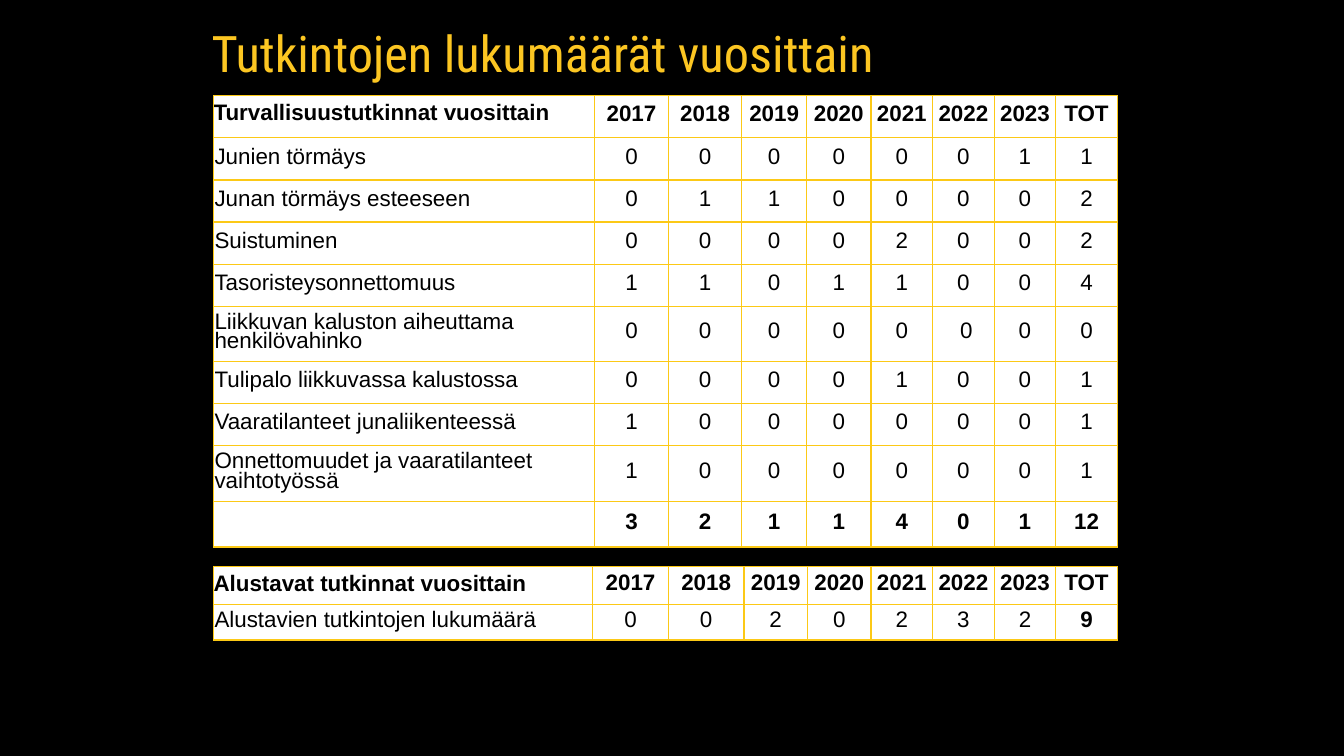
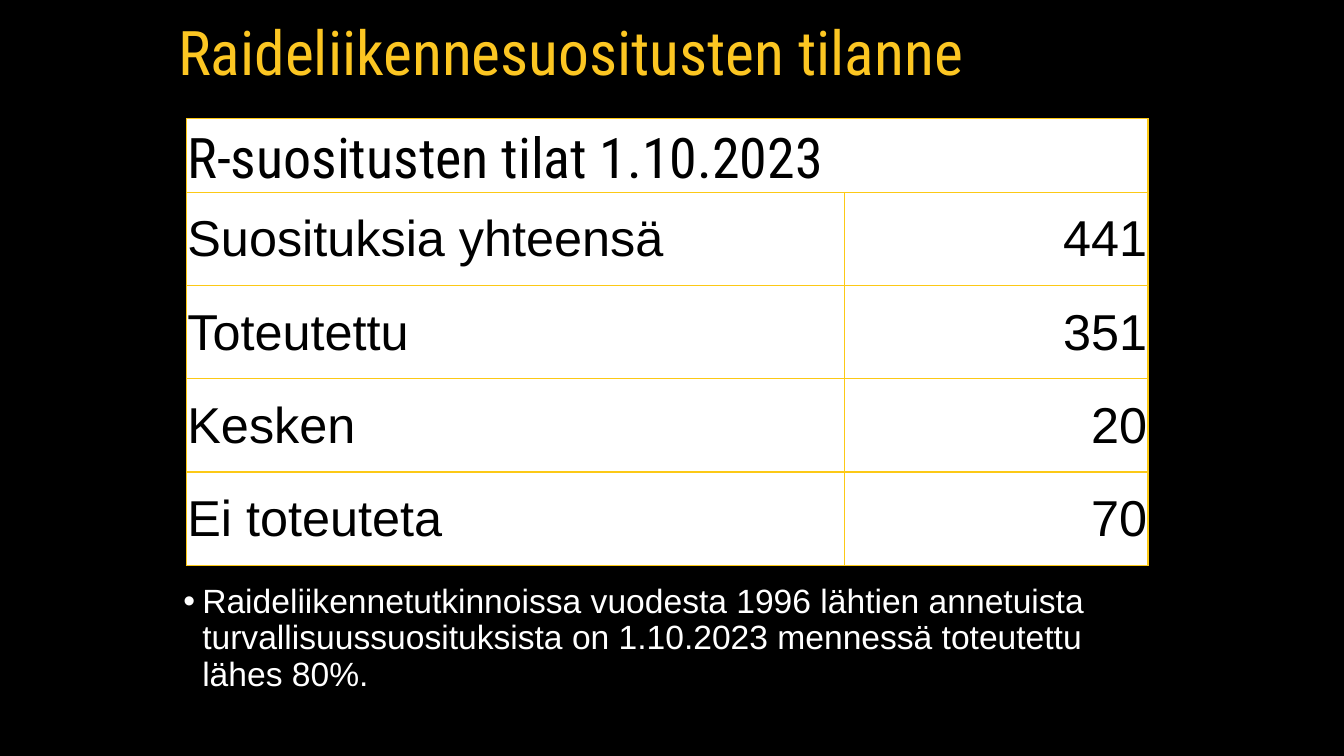
from lxml import etree
from pptx import Presentation
from pptx.dml.color import RGBColor
from pptx.enum import text
from pptx.oxml import ns
from pptx.util import Pt

COLORS = {"background": "000000", "title": "FCC622", "border": "FCC916",
          "cell": "FFFFFF", "ink": "000000", "body": "FFFFFF"}
HEADING_FONT = "Roboto Condensed"
BODY_FONT = "Arial"
ALIGN = text.PP_ALIGN
ANCHOR = text.MSO_ANCHOR

YEARS = ["2017", "2018", "2019", "2020", "2021", "2022", "2023", "TOT"]
INVESTIGATIONS = [
    ["Turvallisuustutkinnat vuosittain", *YEARS],
    ["Junien törmäys", *"00000011"],
    ["Junan törmäys esteeseen", *"01100002"],
    ["Suistuminen", *"00002002"],
    ["Tasoristeysonnettomuus", *"11011004"],
    ["Liikkuvan kaluston aiheuttama henkilövahinko",
     "0", "0", "0", "0", "0", " 0", "0", "0"],
    ["Tulipalo liikkuvassa kalustossa", *"00001001"],
    ["Vaaratilanteet junaliikenteessä", *"10000001"],
    ["Onnettomuudet ja vaaratilanteet vaihtotyössä", *"10000001"],
    ["", "3", "2", "1", "1", "4", "0", "1", "12"],
]
PRELIMINARY = [
    ["Alustavat tutkinnat vuosittain", *YEARS],
    ["Alustavien tutkintojen lukumäärä", *"00202329"],
]
STATUS = [
    ["R-suositusten tilat 1.10.2023", ""],
    ["Suosituksia yhteensä", "441"],
    ["Toteutettu", "351"],
    ["Kesken", "20"],
    ["Ei toteuteta", "70"],
]
SUMMARY = ("Raideliikennetutkinnoissa vuodesta 1996 lähtien annetuista "
           "turvallisuussuosituksista on 1.10.2023 mennessä toteutettu lähes 80%.")


def color(name):
    return RGBColor.from_string(COLORS[name])


def add_run(paragraph, content, size, ink, font=BODY_FONT, bold=False):
    run = paragraph.add_run()
    run.text = content
    run.font.name = font
    run.font.size = Pt(size)
    run.font.bold = bold
    run.font.color.rgb = color(ink)


def place(shape, left, top, width, height):
    shape.left, shape.top = Pt(left), Pt(top)
    shape.width, shape.height = Pt(width), Pt(height)
    shape.text_frame.word_wrap = True
    shape.text_frame.auto_size = text.MSO_AUTO_SIZE.NONE
    paragraph = shape.text_frame.paragraphs[0]
    paragraph.alignment = ALIGN.LEFT
    return paragraph


def add_slide(presentation, layout, title, size, box):
    slide = presentation.slides.add_slide(presentation.slide_layouts[layout])
    paragraph = place(slide.shapes.title, *box)
    slide.shapes.title.text_frame.vertical_anchor = ANCHOR.MIDDLE
    paragraph.line_spacing = 0.9
    add_run(paragraph, title, size, "title", HEADING_FONT)
    return slide


def set_margins(cell, left, top, right, bottom):
    cell.margin_left, cell.margin_top = Pt(left), Pt(top)
    cell.margin_right, cell.margin_bottom = Pt(right), Pt(bottom)


def style_cell(cell):
    properties = cell._tc.get_or_add_tcPr()
    for side in ("a:lnL", "a:lnR", "a:lnT", "a:lnB"):
        line = etree.SubElement(properties, ns.qn(side), w=str(Pt(1)))
        fill = etree.SubElement(line, ns.qn("a:solidFill"))
        etree.SubElement(fill, ns.qn("a:srgbClr"), val=COLORS["border"])
    cell.fill.solid()
    cell.fill.fore_color.rgb = color("cell")


def add_table(slide, rows, left, top, widths, heights, write_cell):
    table = slide.shapes.add_table(
        len(rows), len(widths), Pt(left), Pt(top),
        Pt(sum(widths)), Pt(sum(heights))).table
    table.first_row = table.horz_banding = False
    for column, width in zip(table.columns, widths):
        column.width = Pt(width)
    for row, height in zip(table.rows, heights):
        row.height = Pt(height)
    for row_index, row in enumerate(rows):
        for column_index, content in enumerate(row):
            cell = table.cell(row_index, column_index)
            style_cell(cell)
            if content:
                write_cell(cell, content, row_index, column_index)
    return table


def yearly_writer(total_cells):
    def write_cell(cell, content, row, column):
        paragraph = cell.text_frame.paragraphs[0]
        if row == column == 0:
            set_margins(cell, 0, 3.6, 7.2, 3.6)
        else:
            set_margins(cell, 0.7, 0, 0.7, 0)
            cell.vertical_anchor = ANCHOR.MIDDLE
            paragraph.line_spacing = Pt(14)
        paragraph.alignment = ALIGN.CENTER if column else ALIGN.LEFT
        add_run(paragraph, content, 16, "ink",
                bold=row == 0 or (row, column) in total_cells)
    return write_cell


def write_status_cell(cell, content, row, column):
    set_margins(cell, 0.7, 0.7, 0.7, 0)
    cell.vertical_anchor = ANCHOR.MIDDLE if row else ANCHOR.BOTTOM
    paragraph = cell.text_frame.paragraphs[0]
    paragraph.alignment = ALIGN.RIGHT if column else ALIGN.LEFT
    size, font = (36, BODY_FONT) if row else (40, HEADING_FONT)
    add_run(paragraph, content, size, "ink", font)


def build_counts(presentation):
    slide = add_slide(presentation, 5, "Tutkintojen lukumäärät vuosittain",
                      36, (144, 14.4, 620.6, 51.8))
    last_row = len(INVESTIGATIONS) - 1
    sums = {(last_row, column) for column in range(1, len(YEARS) + 1)}
    add_table(slide, INVESTIGATIONS, 152.6, 68.4,
              [272.2] + [52.6] * 2 + [46.1] * 2 + [44] * 4,
              [30.1] * 5 + [39.3] + [30.1] * 2 + [40, 32.5],
              yearly_writer(sums))
    add_table(slide, PRELIMINARY, 152.6, 404.6,
              [270.8] + [54] * 2 + [45.4] * 2 + [44] * 4,
              [27.4, 25.2], yearly_writer({(1, len(YEARS))}))


def build_status(presentation):
    slide = add_slide(presentation, 1, "Raideliikennesuositusten tilanne",
                      44, (120.2, 5, 714.2, 69.8))
    table = add_table(slide, STATUS, 133.2, 84.8, [470.2, 216.7],
                      [52.6] + [66.6] * 4, write_status_cell)
    table.cell(0, 0).merge(table.cell(0, 1))
    paragraph = place(slide.placeholders[1], 123.8, 414, 708.5, 97.9)
    properties = paragraph._p.get_or_add_pPr()
    properties.set("marL", str(Pt(13.5)))
    properties.set("indent", str(Pt(-13.5)))
    etree.SubElement(properties, ns.qn("a:buChar"), char="•")
    paragraph.line_spacing = 0.9
    paragraph.space_before = Pt(0)
    add_run(paragraph, SUMMARY, 24, "body")


def main():
    presentation = Presentation()
    presentation.slide_width, presentation.slide_height = Pt(960), Pt(540)
    background = presentation.slide_master.background.fill
    background.solid()
    background.fore_color.rgb = color("background")
    build_counts(presentation)
    build_status(presentation)
    presentation.save("out.pptx")


if __name__ == "__main__":
    main()
